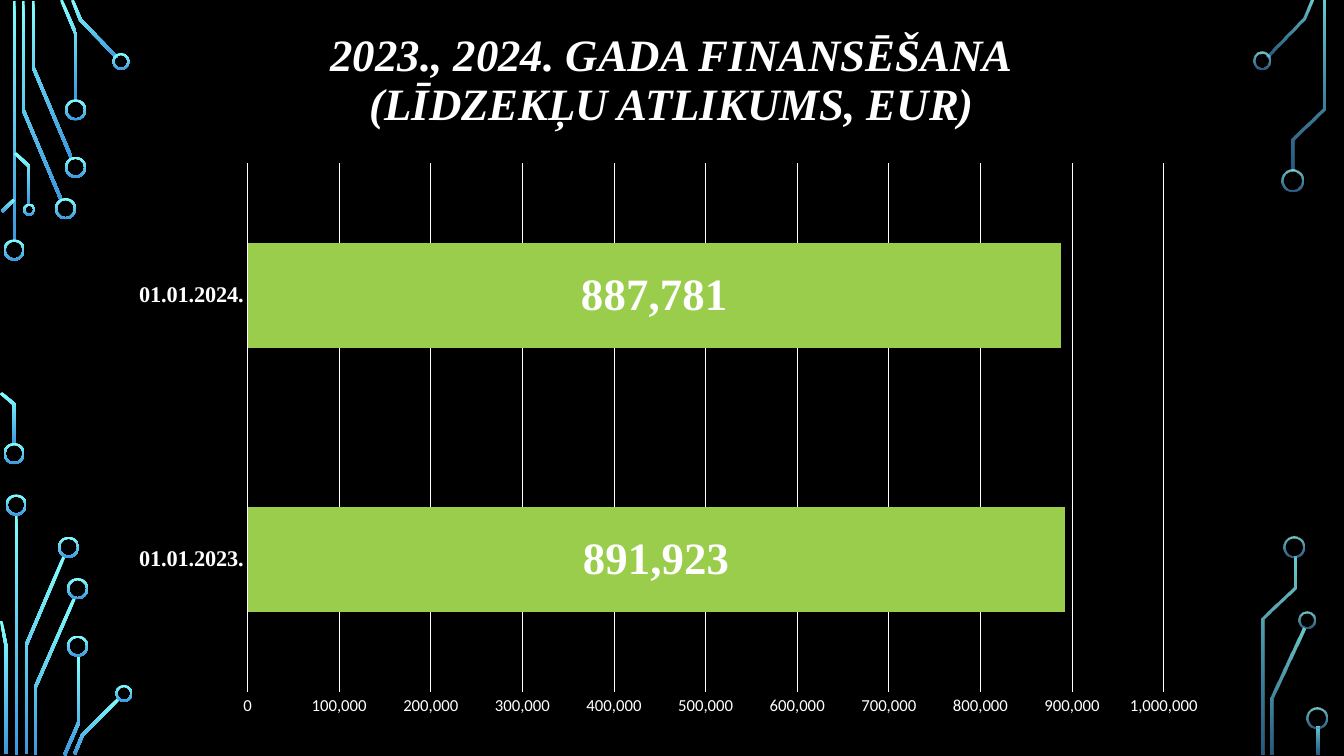
from lxml import etree
from pptx import Presentation
from pptx.chart.data import CategoryChartData
from pptx.dml.color import RGBColor
from pptx.enum.chart import XL_CHART_TYPE as ChartType, XL_TICK_MARK as TickMark
from pptx.enum.shapes import MSO_SHAPE as Shape
from pptx.enum.text import MSO_ANCHOR as Anchor, MSO_AUTO_SIZE as AutoSize, PP_ALIGN as Align
from pptx.oxml.ns import qn
from pptx.util import Inches, Pt

WHITE, BLACK, GREEN = "FFFFFF", "000000", "9ACD4C"
CYAN, BLUE = "82FFFF", "3D97DE"
SERIF, SANS = "Times New Roman", "Calibri"
TRACE_WIDTH, RING_WIDTH = 0.03, 0.02
LARGE, MEDIUM, SMALL = 0.21, 0.17, 0.12

# Circuit decoration in inches: traces are centre lines, rings are (x, y, diameter)
LEFT_TRACES = [
    [(0.14, 0.01), (0.14, 2.4)],
    [(0.23, 0.01), (0.23, 1.09), (0.61, 1.99)],
    [(0.33, 0.01), (0.33, 0.67), (0.71, 1.57)],
    [(0.61, 0), (0.75, 0.33), (0.75, 1)],
    [(0.72, 0), (0.8, 0.2), (1.16, 0.57)],
    [(0.02, 2.1), (0.14, 1.98)],
    [(0.01, 3.9), (0.14, 4.01), (0.14, 4.41)],
    [(0.15, 1.52), (0.29, 1.65), (0.29, 2.03)],
    [(0.16, 5.1), (0.16, 7.49)],
    [(0.26, 7.48), (0.26, 6.4), (0.64, 5.51)],
    [(0.06, 7.48), (0.06, 6.41), (0.01, 6.16)],
    [(0.35, 7.49), (0.35, 6.82), (0.74, 5.93)],
    [(0.64, 7.49), (0.78, 7.17), (0.78, 6.5)],
    [(0.74, 7.48), (0.82, 7.29), (1.18, 6.93)],
]
LEFT_RINGS = [
    (0.14, 2.48, LARGE), (0.14, 4.5, LARGE), (0.65, 2.07, LARGE), (0.75, 1.66, LARGE),
    (0.75, 1.09, LARGE), (1.2, 0.61, MEDIUM), (0.29, 2.08, SMALL), (0.16, 5.01, LARGE),
    (0.68, 5.43, LARGE), (0.77, 5.84, LARGE), (0.77, 6.41, LARGE), (1.23, 6.88, MEDIUM),
]
RIGHT_TRACES = [
    [(12.57, 0.56), (12.93, 0.19), (13.01, 0)],
    [(12.62, 7.49), (12.62, 6.93), (12.93, 6.23)],
    [(12.82, 1.69), (12.82, 1.38), (13.13, 1.08), (13.13, 0.01)],
    [(12.53, 7.49), (12.53, 6.14), (12.84, 5.83), (12.84, 5.52)],
    [(13.07, 7.21), (13.07, 7.49)],
]
RIGHT_RINGS = [
    (12.52, 0.6, MEDIUM), (12.82, 1.79, LARGE), (12.96, 6.15, MEDIUM),
    (12.83, 5.43, LARGE), (13.06, 7.12, LARGE),
]


def rgb(color):
    return RGBColor.from_string(color)


def paint(shape, opacities):
    """Fill with the downward gradient, cyan to blue, at the given percentages."""
    shape.shadow.inherit = False
    shape.line.fill.background()
    shape.fill.gradient()
    shape.fill.gradient_angle = 270
    for stop, color, position in zip(shape.fill.gradient_stops, (CYAN, BLUE), (0, 1)):
        stop.color.rgb = rgb(color)
        stop.position = position
    colors = shape.element.xpath("./p:spPr/a:gradFill//a:srgbClr")
    for color, opacity in zip(colors, opacities):
        if opacity < 100:
            etree.SubElement(color, qn("a:alpha")).set("val", str(opacity * 1000))


presentation = Presentation()
presentation.slide_width, presentation.slide_height = Inches(13.33), Inches(7.5)
slide = presentation.slides.add_slide(presentation.slide_layouts[5])
slide.background.fill.solid()
slide.background.fill.fore_color.rgb = rgb(BLACK)

# Circuit decoration on both edges
for traces, rings, opacities in (
    (LEFT_TRACES, LEFT_RINGS, (100, 100)),
    (RIGHT_TRACES, RIGHT_RINGS, (80, 60)),
):
    for trace in traces:
        # Widen the centre line into a band with mitred corners
        points = [complex(x, y) for x, y in trace]
        normals = [1j * (b - a) / abs(b - a) for a, b in zip(points, points[1:])]
        offsets = [
            TRACE_WIDTH / 2 * (n + m) / (1 + (n * m.conjugate()).real)
            for n, m in zip(normals[:1] + normals, normals + normals[-1:])
        ]
        band = [p + o for p, o in zip(points, offsets)]
        band += [p - o for p, o in zip(points, offsets)][::-1]
        corners = [(Inches(max(p.real, 0)), Inches(max(p.imag, 0))) for p in band]
        builder = slide.shapes.build_freeform(*corners[0])
        builder.add_line_segments(corners[1:], close=True)
        paint(builder.convert_to_shape(), opacities)
    for x, y, diameter in rings:
        ring = slide.shapes.add_shape(
            Shape.DONUT, Inches(x - diameter / 2), Inches(y - diameter / 2),
            Inches(diameter), Inches(diameter))
        ring.adjustments[0] = RING_WIDTH / diameter
        paint(ring, opacities)

# Title
title = slide.shapes.title
title.left, title.top, title.width, title.height = map(Inches, (1.25, 0, 10.83, 1.62))
title.text_frame.auto_size = AutoSize.NONE
title.text_frame.word_wrap = True
title.text_frame.vertical_anchor = Anchor.MIDDLE
paragraph = title.text_frame.paragraphs[0]
paragraph.text = "2023., 2024. GADA FINANSĒŠANA\v(LĪDZEKĻU ATLIKUMS, EUR)"
paragraph.alignment = Align.CENTER
paragraph.line_spacing = 0.9
title_font = paragraph.font

# Bar chart of the remaining funds
chart_data = CategoryChartData(number_format="#,##0")
chart_data.categories = ["01.01.2023.", "01.01.2024."]
chart_data.add_series("Series 1", [891923, 887781])
chart = slide.shapes.add_chart(
    ChartType.BAR_STACKED, Inches(1.05), Inches(1.39), Inches(10.83), Inches(5.76),
    chart_data).chart
chart.has_title = chart.has_legend = False

plot = chart.plots[0]
plot.gap_width, plot.overlap = 150, 100
plot.vary_by_categories = False
bars = plot.series[0]
bars.format.fill.solid()
bars.format.fill.fore_color.rgb = rgb(GREEN)
labels = bars.data_labels
labels.show_value = True
labels.number_format, labels.number_format_is_linked = "#,##0", False

category_axis, value_axis = chart.category_axis, chart.value_axis
for axis in (category_axis, value_axis):
    axis.major_tick_mark = axis.minor_tick_mark = TickMark.NONE
    axis.format.line.fill.background()
category_axis.has_major_gridlines = False
value_axis.has_major_gridlines = True
value_axis.major_gridlines.format.line.color.rgb = rgb(WHITE)
value_axis.major_gridlines.format.line.width = Pt(0.75)
value_axis.minimum_scale, value_axis.maximum_scale = 0, 1000000
value_axis.major_unit = 100000
value_axis.tick_labels.number_format = "#,##0"
value_axis.tick_labels.number_format_is_linked = False

# Fonts of the title and the chart
for font, size, name, bold, italic in (
    (title_font, 32, SERIF, True, True),
    (chart.font, 10, SANS, False, False),
    (category_axis.tick_labels.font, 16, SERIF, True, False),
    (value_axis.tick_labels.font, 12, SANS, False, False),
    (labels.font, 32, SERIF, True, False),
):
    font.size, font.name, font.bold, font.italic = Pt(size), name, bold, italic
    font.color.rgb = rgb(WHITE)

# Inner plot area as shares of the chart
plot_area = chart.element.find(".//" + qn("c:plotArea"))
for old_layout in plot_area.findall(qn("c:layout")):
    plot_area.remove(old_layout)
layout = etree.Element(qn("c:layout"))
plot_area.insert(0, layout)
manual = etree.SubElement(layout, qn("c:manualLayout"))
for tag, value in (
    ("layoutTarget", "inner"), ("xMode", "edge"), ("yMode", "edge"),
    ("x", 0.13), ("y", 0.04), ("w", 0.84), ("h", 0.91),
):
    etree.SubElement(manual, qn("c:" + tag)).set("val", str(value))

presentation.save("out.pptx")
